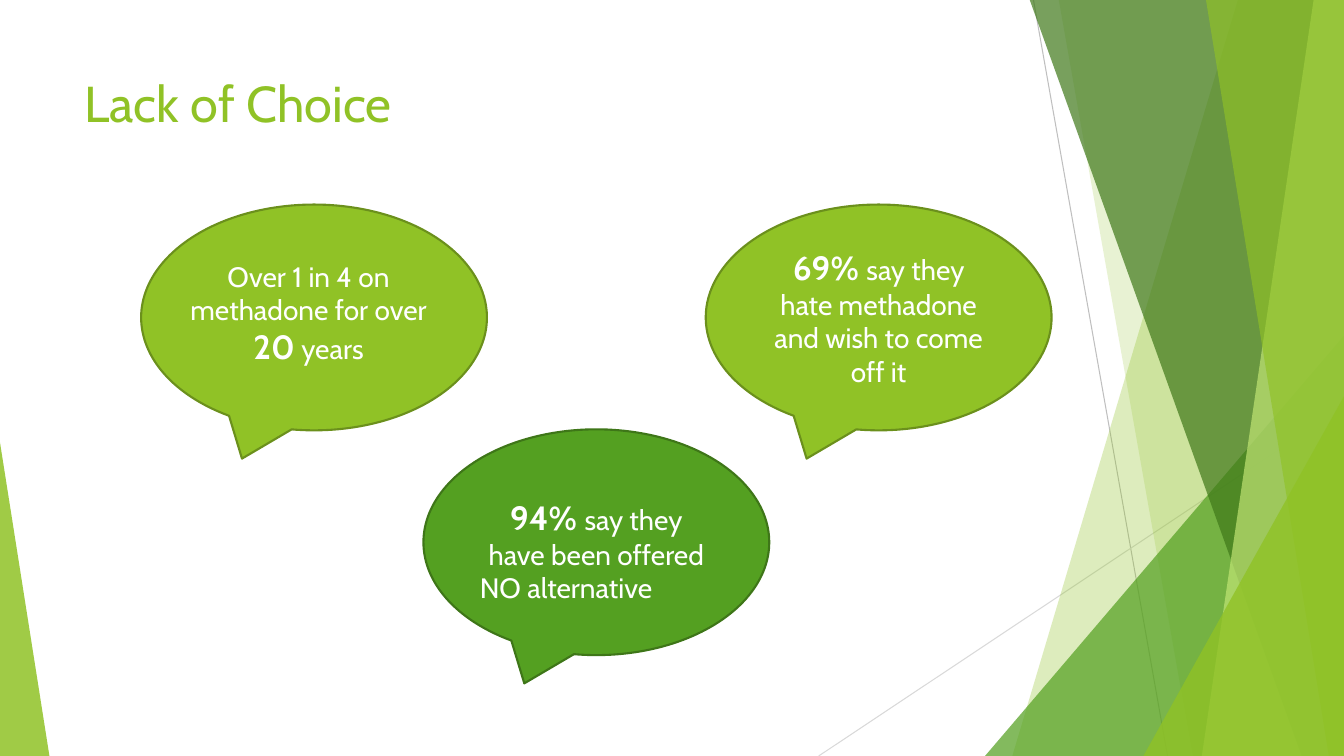
"""Build the "Lack of Choice" slide: three speech bubbles beside a green faceted border."""
import pptx
import pptx.util
import pptx.dml.color
import pptx.enum.shapes
import pptx.enum.text
import pptx.oxml.ns
import lxml.etree

Inches = pptx.util.Inches
Shapes = pptx.enum.shapes.MSO_SHAPE
Align = pptx.enum.text.PP_ALIGN
Anchor = pptx.enum.text.MSO_ANCHOR
qn = pptx.oxml.ns.qn

COLORS = {
    "lime": "90C226", "green": "54A021", "forest": "3F7819", "pale": "C0E474",
    "lime edge": "6B901C", "green edge": "3E7618",
    "gray": "BFBFBF", "light gray": "D9D9D9", "white": "FFFFFF",
}


def paint(shape, color, opacity=100, edge=None):
    shape.shadow.inherit = False
    shape.fill.solid()
    shape.fill.fore_color.rgb = pptx.dml.color.RGBColor.from_string(COLORS[color])
    if opacity < 100:
        tint = shape.fill._xPr.find(".//" + qn("a:srgbClr"))
        lxml.etree.SubElement(tint, qn("a:alpha"), val=str(opacity * 1000))
    if edge:
        shape.line.color.rgb = pptx.dml.color.RGBColor.from_string(COLORS[edge])
        shape.line.width = pptx.util.Pt(1.5)
    else:
        shape.line.fill.background()


def add_span(para, text, size=20, color="white", bold=False):
    span = para.add_run()
    span.text = text
    span.font.name = "Cabin"
    span.font.size = pptx.util.Pt(size)
    span.font.bold = bold
    span.font.color.rgb = pptx.dml.color.RGBColor.from_string(COLORS[color])


deck = pptx.Presentation()
deck.slide_width, deck.slide_height = Inches(13.33), Inches(7.5)
page = deck.slides.add_slide(deck.slide_layouts[6])

for left, top, right, bottom, color in [
    (10.25, 0, 11.58, 7.5, "gray"),
    (13.33, 4.03, 8.12, 7.5, "light gray"),
]:
    ray = page.shapes.add_connector(
        pptx.enum.shapes.MSO_CONNECTOR.STRAIGHT,
        Inches(left), Inches(top), Inches(right), Inches(bottom))
    ray.line.color.rgb = pptx.dml.color.RGBColor.from_string(COLORS[color])
    ray.line.width = pptx.util.Pt(0.75)
    lxml.etree.SubElement(ray._element.spPr, qn("a:effectLst"))

facets = [
    ("band", 12.28, 10.04, "lime", 30),
    ("band", 10.5, 11.83, "lime", 20),
    ("corner", 9.77, 3.33, "green", 72),
    ("band", 10.21, 12.91, "forest", 70),
    ("band", 13.03, 11.92, "pale", 70),
    ("band", 11.96, 13.18, "lime", 65),
    ("corner", 11.34, 3.93, "lime", 80),
]
for kind, first, second, color, opacity in facets:
    if kind == "band":
        outline = page.shapes.build_freeform(Inches(first), Inches(-0.01), scale=1)
        outline.add_line_segments([
            (Inches(13.33), Inches(-0.01)), (Inches(13.33), Inches(7.5)),
            (Inches(second), Inches(7.5))], close=True)
        facet = outline.convert_to_shape()
    else:
        facet = page.shapes.add_shape(
            Shapes.ISOSCELES_TRIANGLE, Inches(first), Inches(second),
            Inches(13.33 - first), Inches(7.5 - second))
        facet.adjustments[0] = 1
    paint(facet, color, opacity)

sliver = page.shapes.add_shape(
    Shapes.ISOSCELES_TRIANGLE, 0, Inches(4.39), Inches(0.49), Inches(3.11))
sliver.adjustments[0] = 0
paint(sliver, "lime", 85)

bubbles = []
for left, top, color in [(1.4, 2.03, "lime"), (7, 2.03, "lime"), (4.2, 4.26, "green")]:
    bubble = page.shapes.add_shape(
        Shapes.OVAL_CALLOUT, Inches(left), Inches(top), Inches(3.43), Inches(2.24))
    paint(bubble, color, edge=color + " edge")
    bubbles.append(bubble)

hate_frame = bubbles[1].text_frame
hate_frame.vertical_anchor = Anchor.MIDDLE

frames = []
for left, top, width, height in [
    (0.74, 0.67, 9.4, 1.44), (1.75, 2.52, 2.62, 1.48), (4.66, 4.88, 2.51, 1.18),
]:
    box = page.shapes.add_textbox(Inches(left), Inches(top), Inches(width), Inches(height))
    box.text_frame.word_wrap = True
    frames.append(box.text_frame)
title_frame, years_frame, offer_frame = frames

add_span(title_frame.paragraphs[0], "Lack of Choice", size=36, color="lime")

for frame, spans in [
    (years_frame, [("Over 1 in 4 on methadone for over ", False), ("20", True), (" years", False)]),
    (hate_frame, [("69% ", True), ("say they hate methadone and wish to come off it", False)]),
    (offer_frame, [("94% ", True), ("say they have been offered", False)]),
]:
    para = frame.paragraphs[0]
    para.alignment = Align.CENTER
    for text, strong in spans:
        add_span(para, text, size=24 if strong else 20, bold=strong)

last_para = offer_frame.add_paragraph()
last_para.alignment = Align.LEFT
add_span(last_para, "NO alternative")

deck.save("out.pptx")
